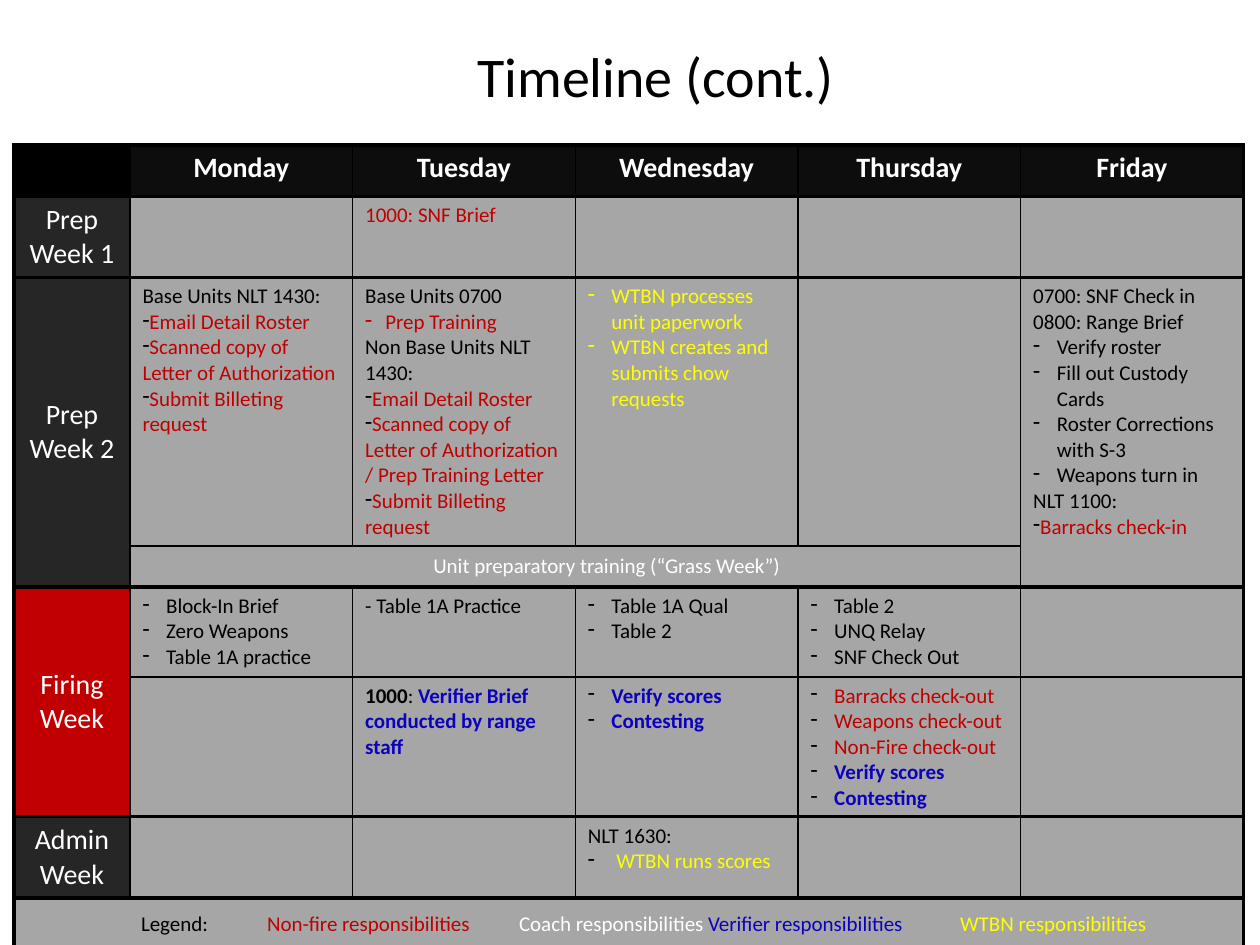
"""Build the weekly range timeline slide."""
from pptx import Presentation
from pptx.dml.color import RGBColor
from pptx.enum.text import MSO_ANCHOR, PP_ALIGN
from pptx.util import Pt
from lxml.etree import SubElement
from pptx.oxml.ns import qn

ink = RGBColor.from_string
BLACK, WHITE, RED = "000000", "FFFFFF", "C00000"
BLUE, YELLOW, GRAY, DARK = "0B02BE", "FFFF00", "A6A6A6", "262626"


def say(frame, text, size=12, color=BLACK, bold=False, align=PP_ALIGN.LEFT,
        left=0, hang=0, dash=None, tabs=(), join=False):
    para = frame.paragraphs[-1]
    if not join:
        if para.runs:
            para = frame.add_paragraph()
        para.alignment = align
        props = para._p.get_or_add_pPr()
        props.set("marL", str(Pt(left)))
        props.set("indent", str(Pt(-hang)))
        if hang:
            if dash:
                tint = SubElement(props, qn("a:buClr"))
                SubElement(tint, qn("a:srgbClr"), val=dash)
            SubElement(props, qn("a:buChar"), char="-")
        if tabs:
            stops = SubElement(props, qn("a:tabLst"))
            for stop in tabs:
                SubElement(stops, qn("a:tab"), pos=str(Pt(stop)), algn="l")
    run = para.add_run()
    run.text = text
    font = run.font
    font.name, font.size, font.bold = "Calibri", Pt(size), bold
    font.color.rgb = ink(color)


def edge(cell, widths):
    props = cell._tc.get_or_add_tcPr()
    for spot, (side, width) in enumerate(widths.items()):
        line = props.makeelement(qn(f"a:ln{side}"), {"w": str(Pt(width))})
        fill = SubElement(line, qn("a:solidFill"))
        SubElement(fill, qn("a:srgbClr"), val=BLACK)
        props.insert(spot, line)


deck = Presentation()
deck.slide_width, deck.slide_height = Pt(720), Pt(540)
slide = deck.slides.add_slide(deck.slide_layouts[6])

title = slide.shapes.add_textbox(Pt(65.5), Pt(7.2), Pt(618.5), Pt(71.3)).text_frame
title.word_wrap = True
title.vertical_anchor = MSO_ANCHOR.MIDDLE
say(title, "Timeline (cont.)", size=32, align=PP_ALIGN.CENTER)

wide = [66.25] + [127.25] * 5
tall = [29.5, 46.25, 153.5, 23.5, 51.25, 80, 46.5, 29.5]
table = slide.shapes.add_table(len(tall), len(wide), Pt(8), Pt(82.8),
                               Pt(sum(wide)), Pt(sum(tall))).table
table.first_row = table.horz_banding = False
for col, width in zip(table.columns, wide):
    col.width = Pt(width)
for row, height in zip(table.rows, tall):
    row.height = Pt(height)

for top, left, base, right in [(2, 0, 3, 0), (2, 5, 3, 5), (3, 1, 3, 4),
                               (4, 0, 5, 0), (7, 0, 7, 5)]:
    table.cell(top, left).merge(table.cell(base, right))

split = {2, 4}
for r in range(len(tall)):
    for c in range(len(wide)):
        cell = table.cell(r, c)
        if r == 0:
            shade = "0D0D0D" if c else BLACK
        elif c == 0 and r < 7:
            shade = RED if r in (4, 5) else DARK
        else:
            shade = GRAY
        cell.fill.solid()
        cell.fill.fore_color.rgb = ink(shade)
        end = r + cell.span_height - 1 if cell.is_merge_origin else r
        edge(cell, {"L": 2.25 if c == 0 else 1,
                    "R": 2.25 if c == 5 or r == 7 else 1,
                    "T": 1 if r - 1 in split else 2.25,
                    "B": 1 if end in split else 2.25})

days = ["Monday", "Tuesday", "Wednesday", "Thursday", "Friday"]
for c, day in enumerate(days, 1):
    say(table.cell(0, c).text_frame, day, size=16, color=WHITE, bold=True,
        align=PP_ALIGN.CENTER)
for r, week in [(1, "Prep Week 1"), (2, "Prep Week 2"),
                (4, "Firing Week"), (6, "Admin Week")]:
    cell = table.cell(r, 0)
    cell.vertical_anchor = MSO_ANCHOR.MIDDLE
    say(cell.text_frame, week, size=16, color=WHITE, align=PP_ALIGN.CENTER)

plain = {}
item = dict(left=13.5, hang=13.5)
flush = dict(hang=13.5, dash=BLACK, color=RED)
task = dict(item, dash=BLACK, color=RED)
check = dict(item, dash=BLACK, color=BLUE, bold=True)
staff = dict(item, color=YELLOW)
plans = {
    (1, 2): [("1000: SNF Brief", dict(color=RED))],
    (2, 1): [("Base Units NLT 1430:", plain),
             ("Email Detail Roster", flush),
             ("Scanned copy of Letter of Authorization", flush),
             ("Submit Billeting request", flush)],
    (2, 2): [("Base Units 0700", plain),
             ("Prep Training", dict(color=RED, left=11.5, hang=11.5)),
             ("Non Base Units NLT 1430:", plain),
             ("Email Detail Roster", flush),
             ("Scanned copy of Letter of Authorization / Prep Training Letter", flush),
             ("Submit Billeting request", flush)],
    (2, 3): [("WTBN processes unit paperwork", staff),
             ("WTBN creates and submits chow requests", staff)],
    (2, 5): [("0700: SNF Check in", plain),
             ("0800: Range Brief", plain),
             ("Verify roster", item),
             ("Fill out Custody Cards", item),
             ("Roster Corrections with S-3", item),
             ("Weapons turn in", item),
             ("NLT 1100:", plain),
             ("Barracks check-in", flush)],
    (3, 1): [("Unit preparatory training (“Grass Week”)",
              dict(color=WHITE, left=36, align=PP_ALIGN.CENTER))],
    (4, 1): [("Block-In Brief", item), ("Zero Weapons", item),
             ("Table 1A practice", item)],
    (4, 2): [("- Table 1A Practice", plain)],
    (4, 3): [("Table 1A Qual", item), ("Table 2", item)],
    (4, 4): [("Table 2", item), ("UNQ Relay", item), ("SNF Check Out", item)],
    (5, 2): [("1000", dict(bold=True)),
             (": ", dict(join=True)),
             ("Verifier Brief conducted by range staff",
              dict(color=BLUE, bold=True, join=True))],
    (5, 3): [("Verify scores", check), ("Contesting", check)],
    (5, 4): [("Barracks check-out", task), ("Weapons check-out", task),
             ("Non-Fire check-out", task),
             ("Verify scores", check), ("Contesting", check)],
    (6, 3): [("NLT 1630:", plain),
             ("WTBN runs scores",
              dict(color=YELLOW, dash=BLACK, left=16.2, hang=16.2))],
    (7, 0): [("Legend:", dict(tabs=(44, 181.5, 312, 450)))]
            + [(f"\t{name} responsibilities", dict(color=tone, join=True))
               for name, tone in [("Non-fire", RED), ("Coach", WHITE),
                                  ("Verifier", BLUE), ("WTBN", YELLOW)]],
}
for (r, c), lines in plans.items():
    for text, form in lines:
        say(table.cell(r, c).text_frame, text, **form)

for r, c in [(3, 1), (7, 0)]:
    table.cell(r, c).vertical_anchor = MSO_ANCHOR.MIDDLE
table.cell(7, 0).margin_left = Pt(72.6)

deck.save("out.pptx")
